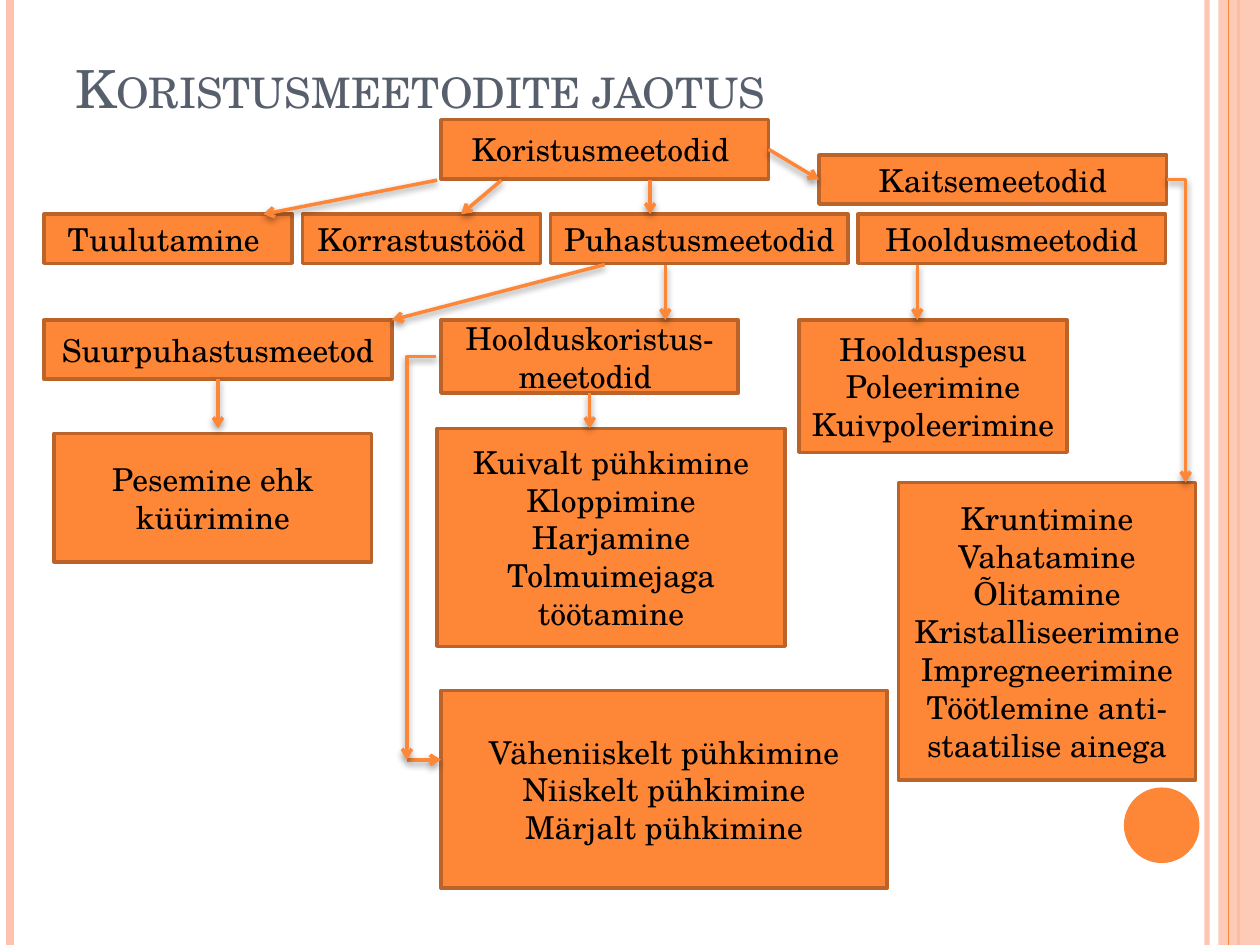
from pptx import Presentation
from pptx.dml.color import RGBColor
from pptx.enum.shapes import MSO_CONNECTOR as Link, MSO_SHAPE as Shape
from pptx.enum.text import MSO_ANCHOR as Anchor, PP_ALIGN as Align
from pptx.oxml import parse_xml
from pptx.oxml.ns import nsdecls, qn
from pptx.util import Inches, Pt
from lxml.etree import SubElement

FONT = "TeX Gyre Schola"
ORANGE, BROWN, PINK, SLATE, BLACK = "FE8637", "BC6329", "FEC3AE", "575F6D", "000000"
TOP, RIGHT, BOTTOM, LEFT = 0, 3, 2, 1

STRIPES = [(9.58, PINK, 3, 93), (0.08, PINK, 4.5, 100), (9.83, ORANGE, 1.5, 100)]
BOXES = {
    "methods": (3.5, 0.95, 2.6, 0.47, ["Koristusmeetodid "]),
    "airing": (0.35, 1.7, 1.97, 0.39, ["Tuulutamine "]),
    "tidying": (2.4, 1.7, 1.89, 0.39, ["Korrastustööd "]),
    "cleaning": (4.37, 1.7, 2.36, 0.39, ["Puhastusmeetodid "]),
    "care": (6.81, 1.7, 2.44, 0.39, ["Hooldusmeetodid"]),
    "protection": (6.5, 1.23, 2.76, 0.39, ["Kaitsemeetodid"]),
    "deep": (0.35, 2.54, 2.76, 0.47, ["Suurpuhastusmeetod"]),
    "upkeep": (3.5, 2.54, 2.36, 0.58, ["Hoolduskoristus-", "meetodid "]),
    "care list": (6.34, 2.54, 2.13, 1.05,
                  ["Hoolduspesu", "Poleerimine", "Kuivpoleerimine "]),
    "protection list": (7.13, 3.83, 2.36, 2.36,
                        ["Kruntimine", "Vahatamine", "Õlitamine", "Kristalliseerimine",
                         "Impregneerimine", "Töötlemine anti-", "staatilise ainega"]),
    "dry list": (3.47, 3.4, 2.76, 1.73,
                 ["Kuivalt pühkimine", "Kloppimine", "Harjamine", "Tolmuimejaga töötamine"]),
    "wet list": (3.5, 5.48, 3.54, 1.57,
                 ["Väheniiskelt pühkimine", "Niiskelt pühkimine", "Märjalt pühkimine"]),
    "deep list": (0.43, 3.44, 2.52, 1.02, ["Pesemine ehk küürimine"]),
}
ARROWS = [
    (5.16, 1.43, 5.16, 1.7), (3.98, 1.43, 3.66, 1.7), (3.47, 1.43, 2.09, 1.7),
    (4.8, 2.1, 3.11, 2.54), (5.28, 2.1, 5.28, 2.54), (7.28, 2.1, 7.28, 2.54),
    (3.23, 6.03, 3.5, 6.03),
]


def paint(color_format, color, opacity=100):
    """Apply a hex colour and an opacity in percent to a fill or a line."""
    color_format.solid()
    color_format.fore_color.rgb = RGBColor.from_string(color)
    if opacity < 100:
        swatch = color_format._xPr.find(".//" + qn("a:srgbClr"))
        SubElement(swatch, qn("a:alpha"), val=str(opacity * 1000))


def add_shape(page, kind, left, top, width, height, color, opacity=100):
    """Add a filled preset shape without outline or shadow."""
    shape = page.shapes.add_shape(kind, *map(Inches, (left, top, width, height)))
    shape.shadow.inherit = False
    paint(shape.fill, color, opacity)
    shape.line.fill.background()
    return shape


def add_line(page, ends, color, weight, opacity=100, kind=Link.STRAIGHT):
    """Add a connector without shadow."""
    line = page.shapes.add_connector(kind, *map(Inches, ends))
    line.line.width = Pt(weight)
    paint(line.line.fill, color, opacity)
    SubElement(line._element.spPr, qn("a:effectLst"))
    return line


def add_arrow(page, ends, begin=None, end=None, bent=False):
    """Add a shadowed arrow, joined to (box, side) pairs where given."""
    arrow = add_line(page, ends, ORANGE, 2, kind=Link.ELBOW if bent else Link.STRAIGHT)
    properties = arrow._element.spPr
    if bent:
        properties.find(qn("a:prstGeom")).set("prst", "bentConnector2")
    SubElement(properties.find(qn("a:ln")), qn("a:tailEnd"), type="arrow")
    properties.find(qn("a:effectLst")).append(parse_xml(
        f'<a:outerShdw {nsdecls("a")} blurRad="{Pt(4)}" dist="{Pt(2)}" dir="5400000" '
        'rotWithShape="0"><a:srgbClr val="000000"><a:alpha val="40000"/></a:srgbClr>'
        '</a:outerShdw>'))
    if begin:
        arrow.begin_connect(*begin)
    if end:
        arrow.end_connect(*end)


def style_text(para, size, color):
    """Set the font of a paragraph."""
    para.font.name = FONT
    para.font.size = Pt(size)
    para.font.color.rgb = RGBColor.from_string(color)


def add_box(page, left, top, width, height, lines):
    """Add an outlined box with one centred paragraph per line."""
    box = add_shape(page, Shape.RECTANGLE, left, top, width, height, ORANGE)
    paint(box.line.fill, BROWN)
    box.line.width = Pt(2)
    frame = box.text_frame
    frame.word_wrap = True
    frame.vertical_anchor = Anchor.MIDDLE
    frame.text = "\n".join(lines)
    for para in frame.paragraphs:
        para.alignment = Align.CENTER
        style_text(para, 18, BLACK)
    return box


def add_title(page, text):
    """Add the slide title in small capitals."""
    frame = page.shapes.add_textbox(*map(Inches, (0.5, 0.3, 8.17, 0.69))).text_frame
    frame.word_wrap = True
    frame.vertical_anchor = Anchor.BOTTOM
    para = frame.paragraphs[0]
    span = para.add_run()
    span.text = text
    style_text(para, 30, SLATE)
    span.font._element.set("cap", "small")


def add_decoration(page):
    """Add the stripes along the edges and the disc."""
    for x, color, weight, opacity in STRIPES:
        add_line(page, (x, 0, x, 7.5), color, weight, opacity)
    add_shape(page, Shape.RECTANGLE, 9.67, 0, 0.33, 7.5, PINK, 87)
    add_line(page, (9.75, 0, 9.75, 7.5), ORANGE, 0.75)
    add_shape(page, Shape.OVAL, 8.92, 6.25, 0.6, 0.6, ORANGE)


def main():
    """Build the slide and save it."""
    deck = Presentation()
    deck.slide_width, deck.slide_height = Inches(10), Inches(7.5)
    page = deck.slides.add_slide(deck.slide_layouts[6])
    add_decoration(page)
    add_title(page, "Koristusmeetodite jaotus")
    boxes = {name: add_box(page, *box) for name, box in BOXES.items()}
    for ends in ARROWS:
        add_arrow(page, ends)
    add_arrow(page, (6.1, 1.19, 6.5, 1.43), (boxes["methods"], RIGHT),
              (boxes["protection"], LEFT))
    add_arrow(page, (4.68, 3.12, 4.68, 3.4), (boxes["upkeep"], BOTTOM))
    add_arrow(page, (1.73, 3.01, 1.73, 3.4), (boxes["deep"], BOTTOM))
    add_arrow(page, (9.26, 1.43, 9.41, 3.83), (boxes["protection"], RIGHT), bent=True)
    add_arrow(page, (3.46, 2.83, 3.23, 6.03), bent=True)
    deck.save("out.pptx")


if __name__ == "__main__":
    main()
